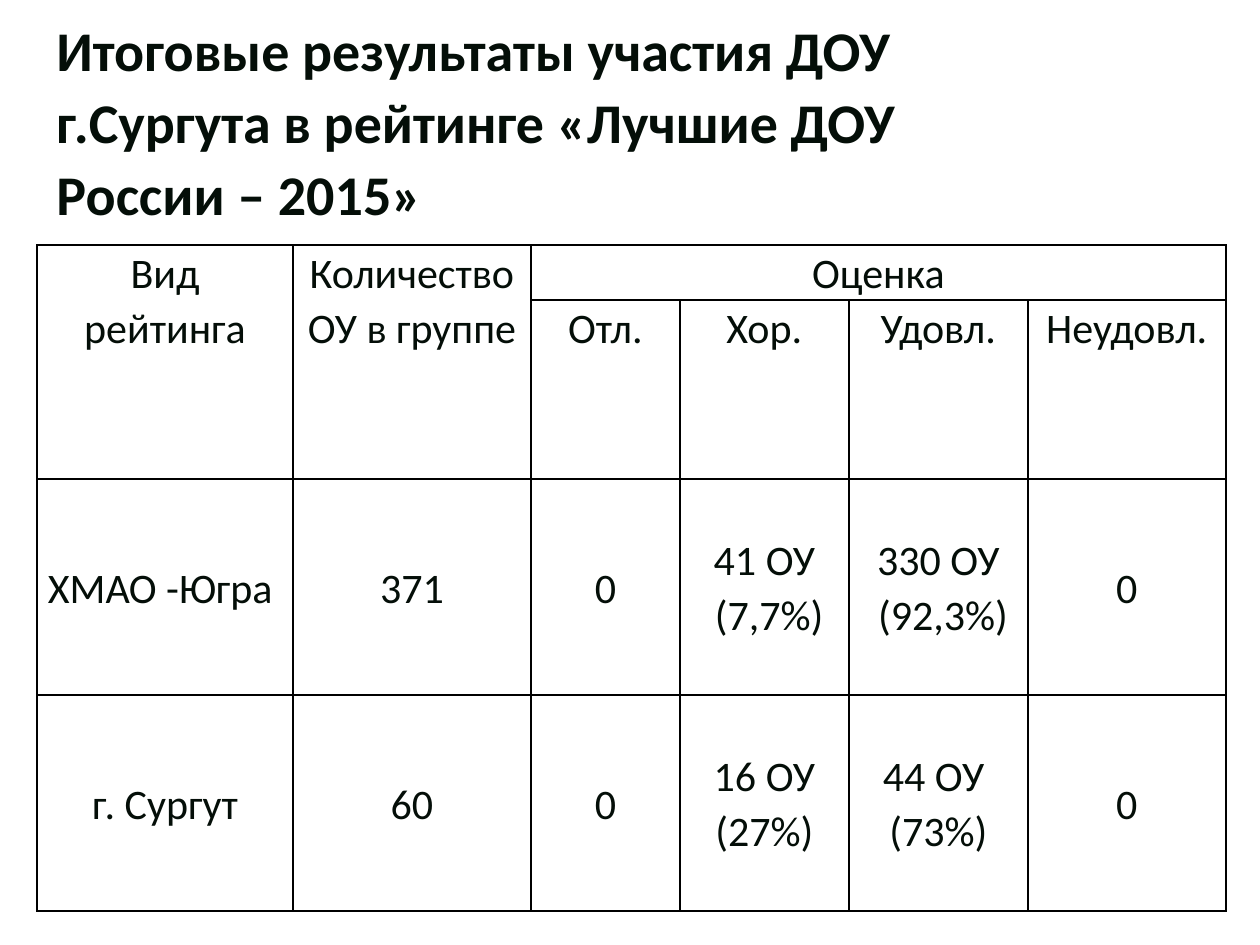
from dataclasses import dataclass

from lxml import etree
from pptx import Presentation
from pptx.dml.color import RGBColor
from pptx.enum.text import MSO_ANCHOR, PP_ALIGN
from pptx.oxml.ns import qn
from pptx.util import Emu, Pt

TOP, MID = MSO_ANCHOR.TOP, MSO_ANCHOR.MIDDLE
LEFT, CENTER = PP_ALIGN.LEFT, PP_ALIGN.CENTER
SCALE = 914400 / 126


@dataclass(frozen=True)
class Theme:
    face: str = "Calibri"
    ink: str = "040E08"
    rule: str = "000000"
    title: int = 32
    body: int = 24
    lead: float = 1.07
    line: int = 1
    pad: int = 9


@dataclass(frozen=True)
class Item:
    row: int
    col: int
    lines: tuple[str, ...]
    rows: int = 1
    cols: int = 1
    anchor: MSO_ANCHOR = MID


THEME = Theme()
COLS = (256, 238, 149, 169, 179, 198)
ROWS = (55, 179, 216, 216)
TITLE = "Итоговые результаты участия ДОУ г.Сургута в рейтинге «Лучшие ДОУ России – 2015»"
GRADES = ("Отл.", "Хор.", "Удовл.", "Неудовл.")
DATA = (
    (("ХМАО -Югра ",), ("371",), ("0",), ("41 ОУ", " (7,7%)"),
     ("330 ОУ", " (92,3%)"), ("0",)),
    (("г. Сургут",), ("60",), ("0",), ("16 ОУ", "(27%)"),
     ("44 ОУ ", "(73%)"), ("0",)),
)
ITEMS = [
    Item(0, 0, ("Вид рейтинга",), rows=2, anchor=TOP),
    Item(0, 1, ("Количество ОУ в группе",), rows=2, anchor=TOP),
    Item(0, 2, ("Оценка",), cols=4, anchor=TOP),
    *(Item(1, c, (name,), anchor=TOP) for c, name in enumerate(GRADES, 2)),
    *(Item(r, c, lines) for r, row in enumerate(DATA, 2)
      for c, lines in enumerate(row)),
]


def px(size: int) -> Emu:
    return Emu(round(size * SCALE))


def apply(target, values: dict) -> None:
    for name, value in values.items():
        setattr(target, name, value)


def write(frame, lines: tuple[str, ...], size: int, align: PP_ALIGN,
          bold: bool = False) -> None:
    for i, line in enumerate(lines):
        para = frame.paragraphs[0] if i == 0 else frame.add_paragraph()
        apply(para, {"alignment": align, "line_spacing": THEME.lead})
        run = para.add_run()
        run.text = line
        apply(run.font, {"name": THEME.face, "size": Pt(size), "bold": bold})
        run.font.color.rgb = RGBColor.from_string(THEME.ink)


def border(cell) -> None:
    props = cell._tc.get_or_add_tcPr()
    for side in ("lnL", "lnR", "lnT", "lnB"):
        line = etree.SubElement(props, qn(f"a:{side}"), w=str(Pt(THEME.line)))
        fill = etree.SubElement(line, qn("a:solidFill"))
        etree.SubElement(fill, qn("a:srgbClr"), val=THEME.rule)


def draw_title(slide) -> None:
    box = slide.shapes.add_textbox(px(44), px(70), px(983), px(98))
    apply(box.text_frame, {"word_wrap": True, "vertical_anchor": MID})
    write(box.text_frame, (TITLE,), THEME.title, LEFT, bold=True)


def draw_table(slide) -> None:
    shape = slide.shapes.add_table(len(ROWS), len(COLS), px(37), px(245),
                                   px(sum(COLS)), px(sum(ROWS)))
    table = shape.table
    apply(table, {"first_row": False, "horz_banding": False})
    for col, width in zip(table.columns, COLS):
        col.width = px(width)
    for row, height in zip(table.rows, ROWS):
        row.height = px(height)

    # Plain ruled cells
    for cell in table.iter_cells():
        apply(cell, {"margin_left": px(THEME.pad), "margin_right": px(THEME.pad),
                     "margin_top": 0, "margin_bottom": 0})
        border(cell)
        cell.fill.background()

    # Headings and results
    for item in ITEMS:
        cell = table.cell(item.row, item.col)
        if item.rows * item.cols > 1:
            cell.merge(table.cell(item.row + item.rows - 1,
                                  item.col + item.cols - 1))
        cell.vertical_anchor = item.anchor
        write(cell.text_frame, item.lines, THEME.body, CENTER)


def main() -> None:
    deck = Presentation()
    apply(deck, {"slide_width": px(1260), "slide_height": px(945)})
    slide = deck.slides.add_slide(deck.slide_layouts[6])
    draw_table(slide)
    draw_title(slide)
    deck.save("out.pptx")


if __name__ == "__main__":
    main()
